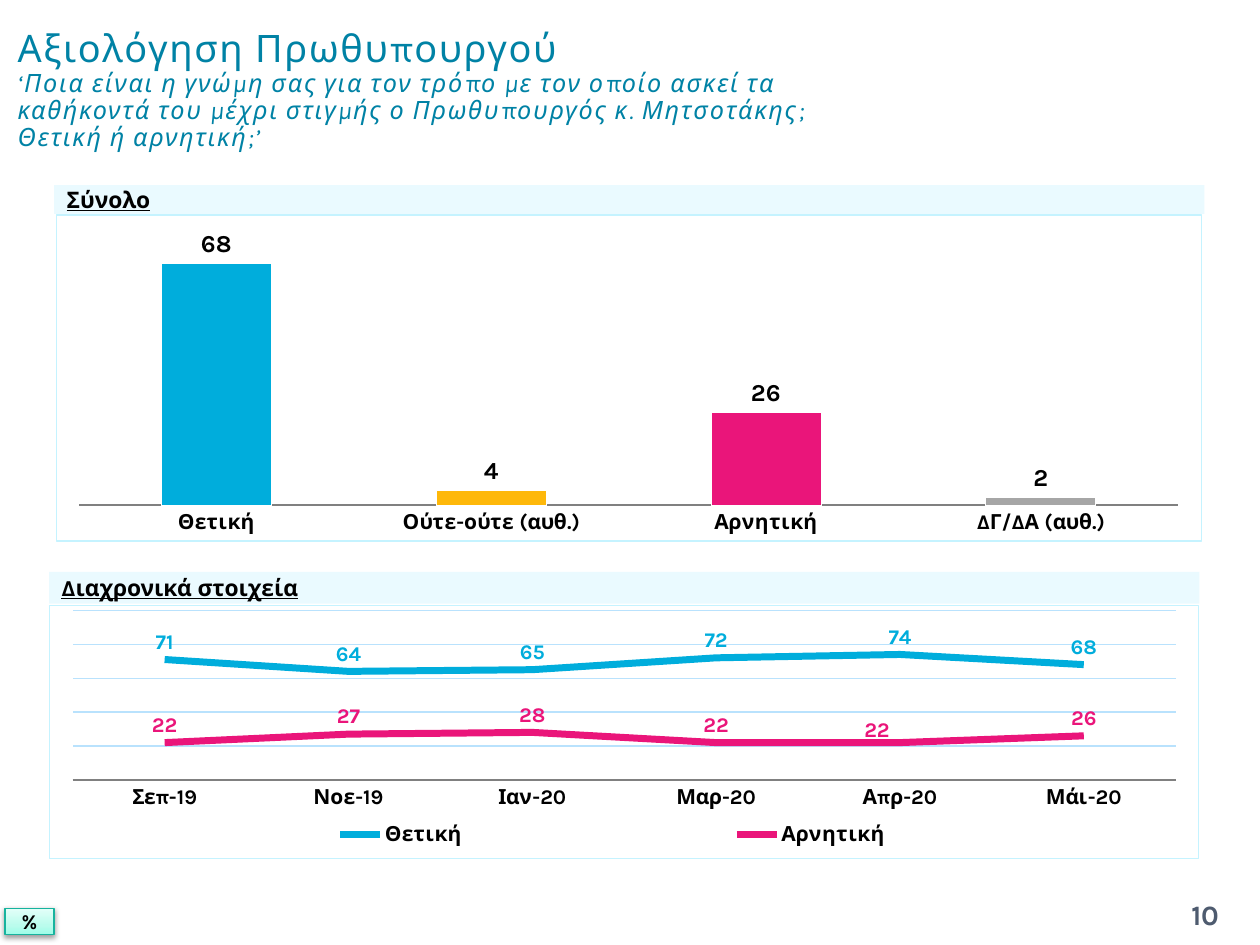
from lxml import etree
from pptx import Presentation
from pptx import util as u
from pptx.chart.data import CategoryChartData
from pptx.dml.color import RGBColor
from pptx.enum import chart as ch, shapes, text
from pptx.oxml import parse_xml
from pptx.oxml.ns import nsdecls, qn

BLACK = RGBColor(0x00, 0x00, 0x00)
WHITE = RGBColor(0xFF, 0xFF, 0xFF)
TITLE_BLUE = RGBColor(0x00, 0x82, 0xA5)
SLATE = RGBColor(0x4E, 0x5B, 0x6F)
PALE = RGBColor(0xC5, 0xF3, 0xFF)
GRID = RGBColor(0xB9, 0xE2, 0xFD)
AXIS = RGBColor(0x80, 0x80, 0x80)
POSITIVE = RGBColor(0x00, 0xAD, 0xDC)
NEUTRAL = RGBColor(0xFE, 0xB8, 0x0A)
NEGATIVE = RGBColor(0xEA, 0x15, 0x7A)
UNKNOWN = RGBColor(0xA6, 0xA6, 0xA6)
TEAL = RGBColor(0x16, 0xB3, 0x9E)
MINTS = ((0, "9DFDE8"), (35, "BBFCED"), (100, "E4FFF9"))


class SlideBuilder:
    """Hold the style and the current slide, and add each kind of element."""

    face = "Karla"

    def __init__(self, slide):
        self.slide = slide

    def style(self, font, size, color=BLACK, **extra):
        font.color.rgb = color
        values = {"name": self.face, "size": u.Pt(size), **extra}
        for key, value in values.items():
            setattr(font, key, value)

    def place(self, item, box):
        for key, value in zip(("left", "top", "width", "height"), box):
            setattr(item, key, u.Cm(value))

    def frame(self, item, **extra):
        values = {"word_wrap": True, "auto_size": text.MSO_AUTO_SIZE.NONE,
                  "vertical_anchor": text.MSO_ANCHOR.MIDDLE, **extra}
        for key, value in values.items():
            setattr(item.text_frame, key, value)
        return item.text_frame.paragraphs[0]

    def rectangle(self, box):
        item = self.slide.shapes.add_shape(
            shapes.MSO_SHAPE.RECTANGLE, *map(u.Cm, box))
        item.shadow.inherit = False
        return item

    def title(self, box, heading, question):
        item = self.slide.shapes.title
        self.place(item, box)
        line = self.frame(item)
        line.text = f"{heading}\v{question}"
        line.alignment = text.PP_ALIGN.LEFT
        line.line_spacing = 0.9
        for run, size, italic in zip(line.runs, (21.6, 14.4), (False, True)):
            self.style(run.font, size, TITLE_BLUE, italic=italic)
            run.font._element.set("spc", "100")

    def band(self, item, box, label, tab=None):
        self.place(item, box)
        item.fill.solid()
        item.fill.fore_color.rgb = PALE
        tint = item._element.spPr.find(f".//{qn('a:srgbClr')}")
        etree.SubElement(tint, qn("a:alpha"), val="35000")
        item.line.fill.background()
        line = self.frame(item)
        line.text = label
        line.alignment = text.PP_ALIGN.LEFT
        line.space_before = u.Pt(0)
        props = line._p.get_or_add_pPr()
        props.set("marL", "0")
        props.set("indent", "0")
        etree.SubElement(props, qn("a:buNone"))
        if tab:
            stops = etree.SubElement(props, qn("a:tabLst"))
            etree.SubElement(stops, qn("a:tab"), pos=str(u.Cm(tab)), algn="l")
        self.style(line.runs[0].font, 13, bold=True, underline=True)

    def badge(self, box, label):
        item = self.rectangle(box)
        item.fill.gradient()
        item.fill.gradient_angle = 90
        stops = item._element.spPr.find(f".//{qn('a:gsLst')}")
        stops[:] = [parse_xml(
            f'<a:gs {nsdecls("a")} pos="{pos * 1000}"><a:srgbClr val="{color}"/></a:gs>')
            for pos, color in MINTS]
        item.line.color.rgb = TEAL
        item.line.width = u.Pt(0.75)
        item._element.spPr.find(qn("a:effectLst")).append(parse_xml(
            f'<a:outerShdw {nsdecls("a")} blurRad="{u.Pt(3.1)}" dist="{u.Pt(1.6)}"'
            ' dir="5400000" rotWithShape="0"><a:srgbClr val="000000">'
            '<a:alpha val="38000"/></a:srgbClr></a:outerShdw>'))
        line = self.frame(item, margin_top=0, margin_bottom=0)
        self.centred(line, label, 12, BLACK)

    def centred(self, line, label, size, color):
        line.text = label
        line.alignment = text.PP_ALIGN.CENTER
        self.style(line.runs[0].font, size, color, bold=True)

    def page_number(self, box, label):
        item = self.slide.shapes.add_textbox(*map(u.Cm, box))
        self.centred(self.frame(item), label, 16, SLATE)

    def layout(self, **parts):
        modes = "".join(f'<c:{key}Mode val="edge"/>' for key in "xy")
        target = '<c:layoutTarget val="inner"/>' if parts.pop("inner", False) else ""
        sizes = "".join(f'<c:{key} val="{value}"/>' for key, value in parts.items())
        return parse_xml(f'<c:layout {nsdecls("c")}><c:manualLayout>{target}{modes}'
                         f'{sizes}</c:manualLayout></c:layout>')

    def chart(self, kind, box, categories, series, plot_height):
        data = CategoryChartData()
        data.categories = categories
        for name, values in series:
            data.add_series(name, values)
        chart = self.slide.shapes.add_chart(kind, *map(u.Cm, box), data).chart
        self.style(chart.font, 18)
        chart.has_title = chart.has_legend = False
        chart._chartSpace.find(qn("c:chart")).addnext(parse_xml(
            f'<c:spPr {nsdecls("c", "a")}><a:noFill/><a:ln w="{u.Pt(0.75)}"><a:solidFill>'
            f'<a:srgbClr val="{PALE}"/></a:solidFill></a:ln></c:spPr>'))
        area = chart._chartSpace.find(f".//{qn('c:plotArea')}")
        for old in area.findall(qn("c:layout")):
            area.remove(old)
        area.insert(0, self.layout(inner=True, x=0.02, y=0.02, w=0.96, h=plot_height))
        axis = chart.category_axis
        axis.major_tick_mark = ch.XL_TICK_MARK.NONE
        axis.format.line.color.rgb = AXIS
        self.style(axis.tick_labels.font, 12, bold=True)
        chart.value_axis.visible = False
        chart.value_axis.minimum_scale = 0
        chart.value_axis.has_major_gridlines = False
        return chart

    def labels(self, series, size, color, position):
        labels = series.data_labels
        self.style(labels.font, size, color, bold=True)
        values = {"show_value": True, "number_format": "0",
                  "number_format_is_linked": False, "position": position}
        for key, value in values.items():
            setattr(labels, key, value)

    def columns(self, box, categories, values, colors):
        chart = self.chart(ch.XL_CHART_TYPE.COLUMN_CLUSTERED, box, categories,
                           [("Series 1", values)], 0.87)
        chart.value_axis.maximum_scale = 80
        plot = chart.plots[0]
        plot.vary_by_categories = False
        plot.gap_width, plot.overlap = 150, -25
        bars = plot.series[0]
        for index, color in enumerate(colors):
            bar = bars.points[index].format
            bar.fill.solid()
            bar.fill.fore_color.rgb = color
            bar.line.color.rgb = WHITE
        self.labels(bars, 14, BLACK, ch.XL_LABEL_POSITION.OUTSIDE_END)

    def trend(self, box, categories, series, colors, shifted):
        chart = self.chart(ch.XL_CHART_TYPE.LINE, box, categories, series, 0.67)
        axis = chart.value_axis
        axis.maximum_scale, axis.major_unit = 100, 20
        axis.has_major_gridlines = True
        axis.major_gridlines.format.line.color.rgb = GRID
        axis.major_gridlines.format.line.width = u.Pt(0.75)
        chart.has_legend = True
        legend = chart.legend
        legend.position = ch.XL_LEGEND_POSITION.BOTTOM
        legend.include_in_layout = False
        self.style(legend.font, 12, bold=True)
        for old in legend._element.findall(qn("c:layout")):
            legend._element.remove(old)
        legend._element.find(qn("c:legendPos")).addnext(
            self.layout(x=0.02, y=0.84, w=0.94, h=0.13))
        above = ch.XL_LABEL_POSITION.ABOVE
        for line, color in zip(chart.plots[0].series, colors):
            line.smooth = False
            line.marker.style = ch.XL_MARKER_STYLE.NONE
            line.format.line.color.rgb = color
            line.format.line.width = u.Pt(4)
            self.labels(line, 12, color, above)
        label = line.points[shifted].data_label
        self.style(label.font, 12, color, bold=True)
        label.position = above
        index = line._element.find(f".//{qn('c:dLbl')}/{qn('c:idx')}")
        index.addnext(parse_xml(
            f'<c:layout {nsdecls("c")}><c:manualLayout><c:x val="-0.02"/>'
            '<c:y val="0.02"/></c:manualLayout></c:layout>'))


def main():
    deck = Presentation()
    deck.slide_width, deck.slide_height = u.Cm(25.4), u.Cm(19.05)
    slide = deck.slides.add_slide(deck.slide_layouts[1])
    page = SlideBuilder(slide)
    page.title((0.1, 0.33, 17.4, 3), "Αξιολόγηση Πρωθυπουργού",
               "‘Ποια είναι η γνώμη σας για τον τρόπο με τον οποίο ασκεί τα καθήκοντά του "
               "μέχρι στιγμής ο Πρωθυπουργός κ. Μητσοτάκης; Θετική ή αρνητική;’")
    page.band(slide.placeholders[1], (1.09, 3.73, 23.19, 0.58), "Σύνολο\t", tab=2.88)
    page.columns((1.12, 4.32, 23.11, 6.6),
                 ("Θετική", "Ούτε-ούτε (αυθ.)", "Αρνητική", "ΔΓ/ΔΑ (αυθ.)"),
                 (68, 4, 26, 2), (POSITIVE, NEUTRAL, NEGATIVE, UNKNOWN))
    page.badge((0.1, 18.31, 0.99, 0.53), "%")
    page.page_number((23.29, 17.93, 2.01, 1.02), "10")
    history = (0.99, 11.53, 23.19, 0.64)
    page.band(page.rectangle(history), history, "Διαχρονικά στοιχεία")
    page.trend((0.99, 12.19, 23.19, 5.13),
               ("Σεπ-19", "Νοε-19", "Ιαν-20", "Μαρ-20", "Απρ-20", "Μάι-20"),
               (("Θετική", (71, 64, 65, 72, 74, 68)),
                ("Αρνητική", (22, 27, 28, 22, 22, 26))),
               (POSITIVE, NEGATIVE), shifted=4)
    deck.save("out.pptx")


if __name__ == "__main__":
    main()
